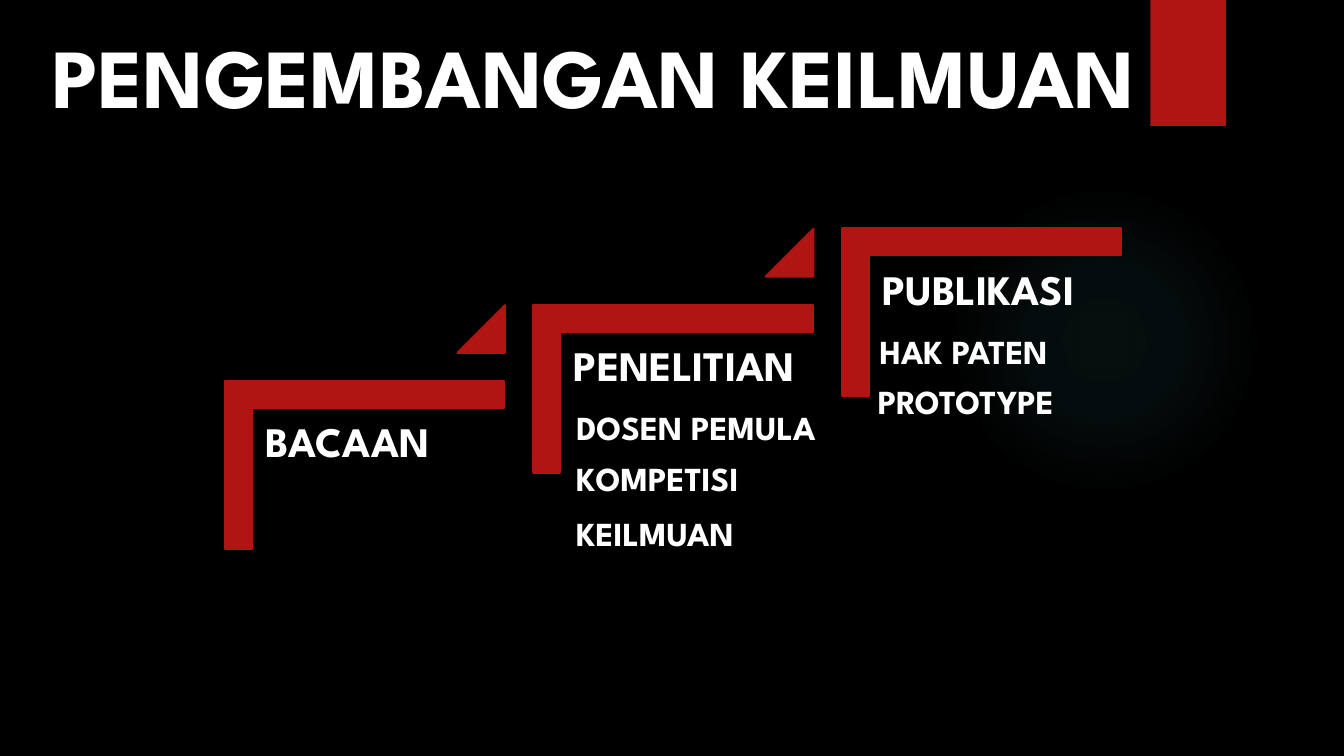
from pptx import Presentation
from pptx.dml.color import RGBColor
from pptx.enum.shapes import MSO_SHAPE
from pptx.enum.text import MSO_ANCHOR, MSO_AUTO_SIZE, PP_ALIGN
from pptx.oxml import parse_xml
from pptx.oxml.ns import nsdecls, qn
from pptx.util import Pt

OVAL, RECT = MSO_SHAPE.OVAL, MSO_SHAPE.RECTANGLE
CORNER, TRIANGLE = MSO_SHAPE.CORNER, MSO_SHAPE.ISOSCELES_TRIANGLE
TOP, LEFT = MSO_ANCHOR.TOP, PP_ALIGN.LEFT
GROW = MSO_AUTO_SIZE.SHAPE_TO_FIT_TEXT
FONT = "League Spartan"
HEX = {"back": "000000", "red": "B01513", "text": "FFFFFF", "glow": "50B9C1"}
RGB = {name: RGBColor.from_string(code) for name, code in HEX.items()}

prs = Presentation()
prs.slide_width, prs.slide_height = Pt(960), Pt(540)
slide = prs.slides.add_slide(prs.slide_layouts[5])
slide.background.fill.solid()
slide.background.fill.fore_color.rgb = RGB["back"]


def add_red(kind, x, y, w, h, line=0):
    shape = slide.shapes.add_shape(kind, Pt(x), Pt(y), Pt(w), Pt(h))
    shape.shadow.inherit = False
    shape.fill.solid()
    shape.fill.fore_color.rgb = RGB["red"]
    if line:
        shape.line.color.rgb = RGB["red"]
        shape.line.width = Pt(line)
    else:
        shape.line.fill.background()
    return shape


def write(box, text, size, wrap=False):
    frame = box.text_frame
    frame.text = text
    frame.word_wrap = wrap
    frame.vertical_anchor = TOP
    if not wrap:
        frame.auto_size = GROW
    para = frame.paragraphs[0]
    para.alignment = LEFT
    font = para.runs[0].font
    font.name, font.size, font.bold = FONT, Pt(size), True
    font.color.rgb = RGB["text"]
    return frame


# Soft round glow
glow = add_red(OVAL, 677.5, 131.8, 221.8, 221.8)
stops = "".join(
    f'<a:gs pos="{pos}000"><a:srgbClr val="{HEX["glow"]}">'
    f'<a:alpha val="{alpha}000"/></a:srgbClr></a:gs>'
    for pos, alpha in ((0, 7), (36, 6), (69, 0)))
props = glow._element.spPr
props.replace(props.find(qn("a:solidFill")), parse_xml(
    f'<a:gradFill {nsdecls("a")}><a:gsLst>{stops}</a:gsLst><a:path path="circle">'
    '<a:fillToRect l="50000" t="50000" r="50000" b="50000"/></a:path></a:gradFill>'))

# Red tab with a shadow
tab = add_red(RECT, 821.8, 0, 54, 90)
tab._element.spPr.find(qn("a:effectLst")).append(parse_xml(
    f'<a:outerShdw {nsdecls("a")} blurRad="38100" dist="25400" dir="5400000">'
    f'<a:srgbClr val="{HEX["back"]}"><a:alpha val="45000"/></a:srgbClr></a:outerShdw>'))

# Title
title = slide.shapes.title
title.left, title.top, title.width, title.height = Pt(30.2), Pt(13.7), Pt(839.5), Pt(80)
write(title, "PENGEMBANGAN KEILMUAN", 60)

# Rising steps
STEP, RISE = 220.2, 54.5
names = ["BACAAN", "PENELITIAN", "PUBLIKASI"]
for i, name in enumerate(names):
    dx, dy = i * STEP, -i * RISE
    angle = add_red(CORNER, 200.7 + dx, 232.4 + dy, 119.7, 199.4, 1.5)
    angle.rotation = 90
    angle.adjustments[0] = angle.adjustments[1] = 0.16
    label = slide.shapes.add_textbox(Pt(180.8 + dx), Pt(292.1 + dy), Pt(180), Pt(157.7))
    frame = write(label, name, 30, True)
    frame.margin_left = frame.margin_right = Pt(9)
    frame.margin_top = frame.margin_bottom = Pt(9)
    frame.paragraphs[0].line_spacing = 0.9
    if i < len(names) - 1:
        wedge = add_red(TRIANGLE, 326.8 + dx, 218 + dy, 34, 34, 1.5)
        wedge.adjustments[0] = 1

# Items under the steps
items = [
    ("HAK PATEN", 621.2, 232.6, 143.3),
    ("PROTOTYPE", 619.9, 268.9, 144.7),
    ("DOSEN PEMULA", 404.6, 287.3, 193.7),
    ("KOMPETISI", 404.6, 323.6, 134.6),
    ("KEILMUAN", 404.6, 362.9, 132.5),
]
for text, x, y, w in items:
    write(slide.shapes.add_textbox(Pt(x), Pt(y), Pt(w), Pt(36)), text, 24)

prs.save("out.pptx")
